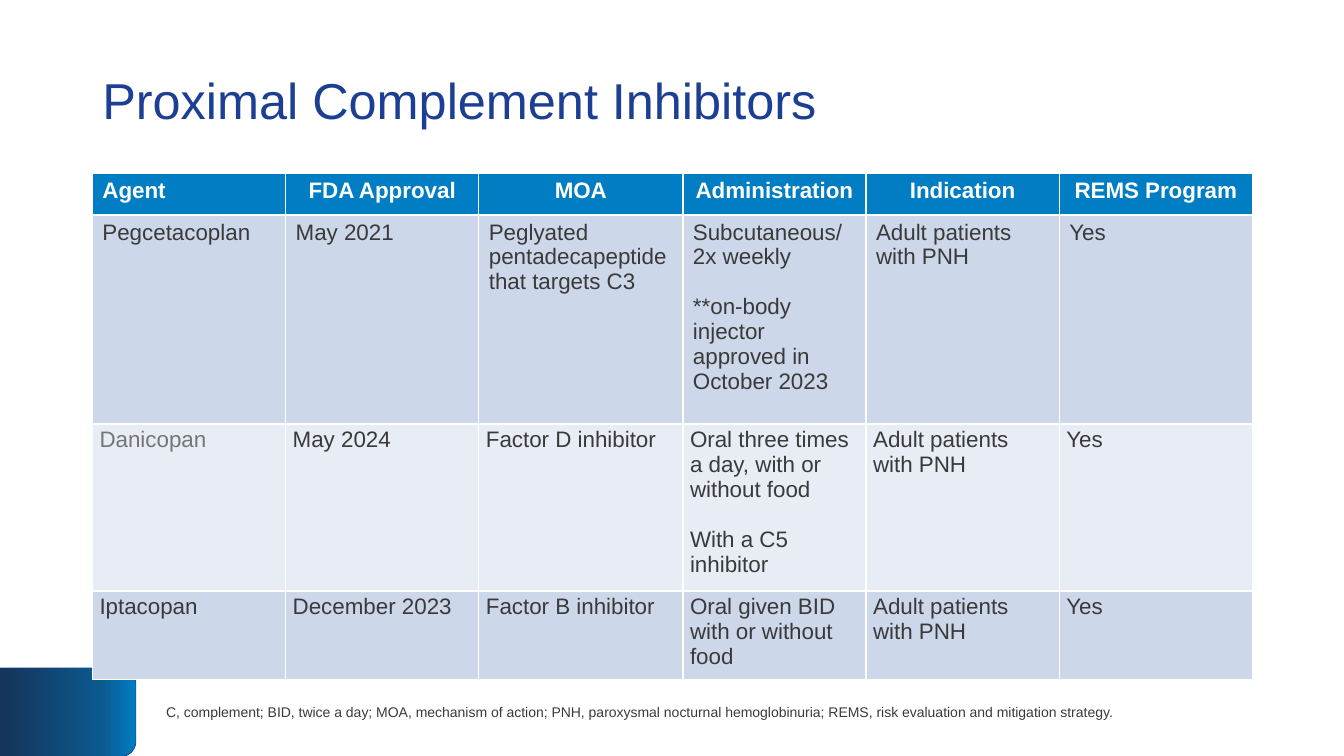
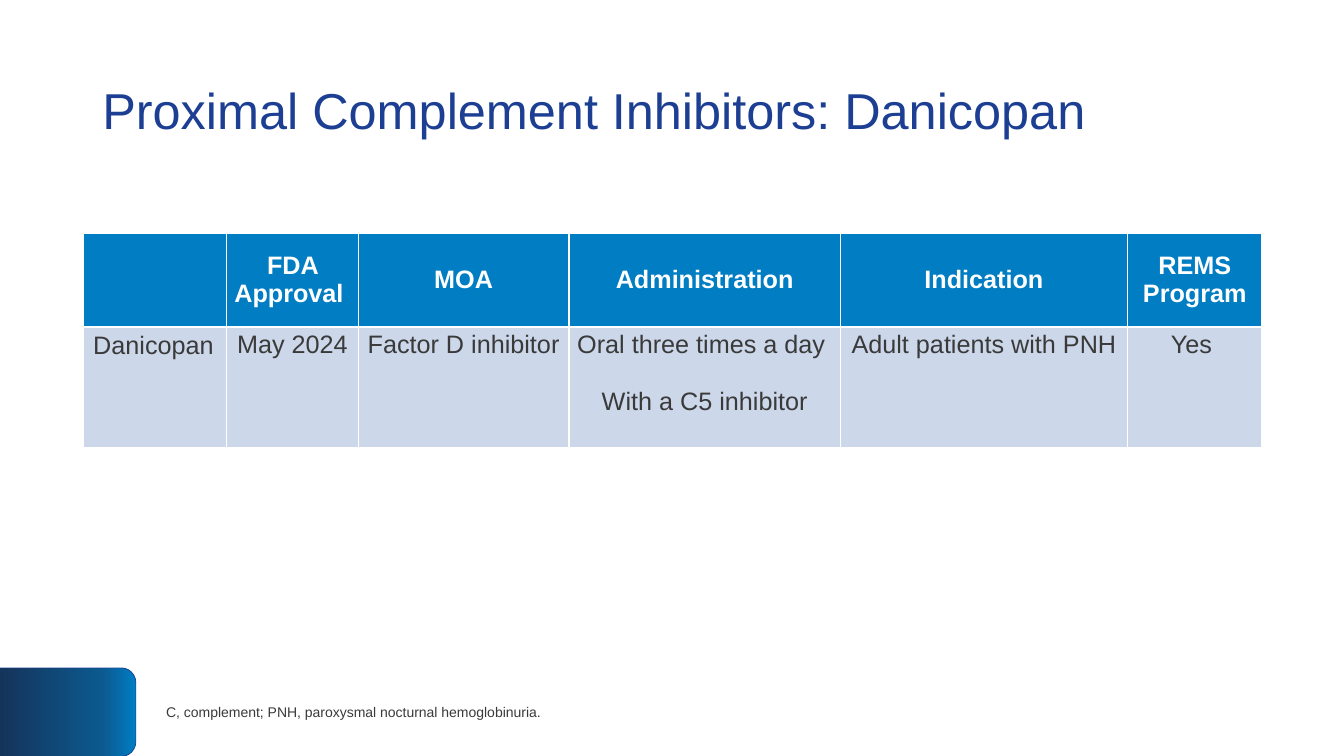
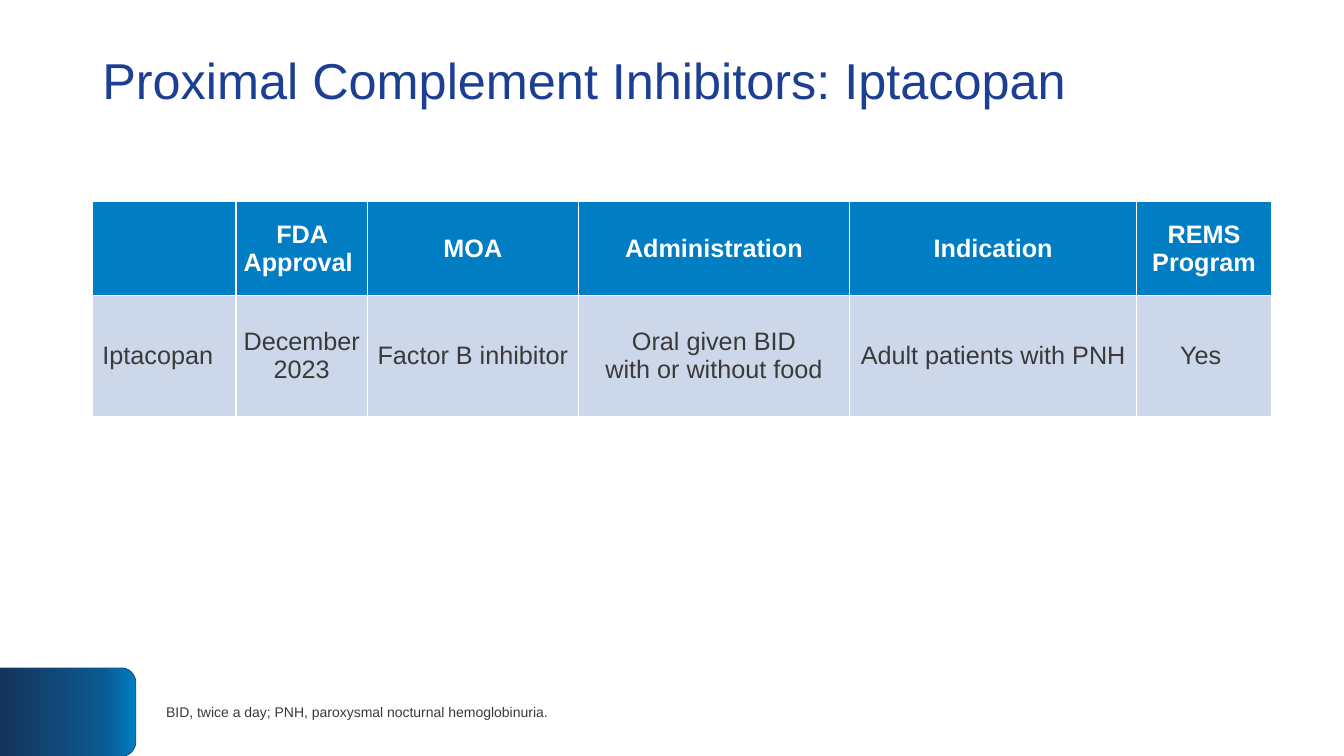
from dataclasses import dataclass

from lxml import etree
from pptx import Presentation
from pptx import util as u
from pptx.dml.color import RGBColor
from pptx.enum import shapes, text
from pptx.oxml import ns, parse_xml


@dataclass(frozen=True)
class Theme:
    font: str = "Arial"
    title: str = "1C3F93"
    body: str = "3A3A3A"
    muted: str = "757575"
    white: str = "FFFFFF"
    header: str = "007DC3"
    bands: tuple = ("CCD7E9", "E7ECF5")
    tab_stops: tuple = ((0, "007DC3"), (25, "0B598F"), (100, "15345A"))
    title_size: int = 36
    note_size: int = 10
    wide_inset: tuple = (1.2, 0.6)
    tight_inset: tuple = (0.85, 0.45)


T = Theme()
WIDTH, HEIGHT = u.Inches(13.33), u.Inches(7.5)
GRID_COLUMNS = 160
LEFT, CONTENT_WIDTH = 11, 138
CENTER, START = text.PP_ALIGN.CENTER, text.PP_ALIGN.LEFT
TOP, MIDDLE = text.MSO_ANCHOR.TOP, text.MSO_ANCHOR.MIDDLE

HEADINGS = ["FDA Approval ", "MOA", "Administration", "Indication", "REMS Program"]
OVERVIEW = [
    ["Agent"] + [h.strip() for h in HEADINGS],
    ["Pegcetacoplan", "May 2021", "Peglyated pentadecapeptide that targets C3",
     ["Subcutaneous/ 2x weekly", "**on-body injector approved in October 2023"],
     "Adult patients with PNH", "Yes"],
    ["Danicopan", "May 2024", "Factor D inhibitor",
     ["Oral three times a day, with or without food", "With a C5 inhibitor"],
     "Adult patients with PNH", "Yes"],
    ["Iptacopan", "December 2023", "Factor B inhibitor",
     "Oral given BID with or without food", "Adult patients with PNH", "Yes"],
]
DANICOPAN = ["Danicopan", "May 2024", "Factor D inhibitor",
             ["Oral three times a day ", "With a C5 inhibitor"],
             "Adult patients with PNH", "Yes "]
IPTACOPAN = ["Iptacopan", "December 2023", "Factor B inhibitor",
             "Oral given BID\nwith or without food",
             "Adult patients with PNH", "Yes "]


def grid(n):
    return u.Emu(round(n * WIDTH / GRID_COLUMNS))


def rgb(color):
    return RGBColor.from_string(color)


def write(p, content, size, color, bold=False):
    for i, line in enumerate(content.split("\n")):
        if i:
            p.add_line_break()
        if line:
            r = p.add_run()
            r.text = line
            r.font.name, r.font.size, r.font.bold = T.font, u.Pt(size), bold
            r.font.color.rgb = rgb(color)


def add_text(s, box, content, size, color, line_spacing=1.0):
    tf = s.shapes.add_textbox(*map(grid, box)).text_frame
    tf.word_wrap = True
    tf.vertical_anchor = MIDDLE
    p = tf.paragraphs[0]
    p.line_spacing = line_spacing
    write(p, content, size, color)


def add_corner_tab(s):
    sp = s.shapes.add_shape(shapes.MSO_SHAPE.ROUND_2_SAME_RECTANGLE,
                            *map(grid, (2.8, 76.7, 10.55, 16.2)))
    sp.rotation = 90
    sp.shadow.inherit = False
    sp.line.color.rgb = rgb(T.title)
    sp.line.width = u.Pt(0.5)
    sp.fill.background()
    stops = "".join(f'<a:gs pos="{pos * 1000}"><a:srgbClr val="{color}"/></a:gs>'
                    for pos, color in T.tab_stops)
    gradient = parse_xml(f'<a:gradFill {ns.nsdecls("a")} rotWithShape="1"><a:gsLst>{stops}'
                         '</a:gsLst><a:lin ang="5400000" scaled="0"/></a:gradFill>')
    properties = sp.element.spPr
    properties.replace(properties.find(ns.qn("a:noFill")), gradient)


def add_borders(cell):
    properties = cell._tc.get_or_add_tcPr()
    for i, side in enumerate("LRTB"):
        line = etree.Element(ns.qn(f"a:ln{side}"), w=str(u.Pt(1)))
        fill = etree.SubElement(line, ns.qn("a:solidFill"))
        etree.SubElement(fill, ns.qn("a:srgbClr"), val=T.white)
        properties.insert(i, line)


def fill_cell(cell, content, size, fill, color=T.body, bold=False,
              align=START, anchor=TOP, inset=T.tight_inset):
    cell.fill.solid()
    cell.fill.fore_color.rgb = rgb(fill)
    cell.vertical_anchor = anchor
    cell.margin_left = cell.margin_right = grid(inset[0])
    cell.margin_top = cell.margin_bottom = grid(inset[1])
    add_borders(cell)
    tf = cell.text_frame
    for i, paragraph in enumerate([content] if isinstance(content, str) else content):
        p = tf.add_paragraph() if i else tf.paragraphs[0]
        p.alignment = align
        if i:
            p.space_before = u.Pt(size * 1.12)
        write(p, paragraph, size, color, bold)


def add_table(s, left, top, columns, rows, data, size, style):
    box = left, top, sum(columns), sum(rows)
    table = s.shapes.add_table(len(rows), len(columns), *map(grid, box)).table
    table.horz_banding = False
    for column, width in zip(table.columns, columns):
        column.width = grid(width)
    for row, height in zip(table.rows, rows):
        row.height = grid(height)
    for i, values in enumerate(data):
        for j, value in enumerate(values):
            look = (dict(fill=T.header, color=T.white, bold=True) if i == 0
                    else dict(fill=T.bands[(i - 1) % 2]))
            fill_cell(table.cell(i, j), value, size, **{**look, **style(i, j)})


def overview_style(i, j):
    style = dict(inset=T.wide_inset if i < 2 else T.tight_inset,
                 align=CENTER if i == 0 and j else START)
    if (i, j) == (2, 0):
        style["color"] = T.muted
    return style


def add_agent_table(s, left, top, values, anchor):
    def style(i, j):
        return dict(align=CENTER if j else START,
                    anchor=anchor if i else MIDDLE,
                    inset=T.tight_inset if j else T.wide_inset)

    add_table(s, left, top, (17.1, 15.65, 25.1, 32.3, 34.2, 16), (11.2, 14.35),
              [[""] + HEADINGS, values], 18, style)


def add_slide(prs, title, title_height, note):
    s = prs.slides.add_slide(prs.slide_layouts[6])
    add_corner_tab(s)
    add_text(s, (LEFT, 4.8, CONTENT_WIDTH, title_height), title,
             T.title_size, T.title, 0.9)
    add_text(s, (18.6, 79.5, 139.8, 10.5), note, T.note_size, T.body)
    return s


def main():
    prs = Presentation()
    prs.slide_width, prs.slide_height = WIDTH, HEIGHT

    s = add_slide(prs, "Proximal Complement Inhibitors", 15,
                  "C, complement; BID, twice a day; MOA, mechanism of action; "
                  "PNH, paroxysmal nocturnal hemoglobinuria; "
                  "REMS, risk evaluation and mitigation strategy.")
    add_table(s, LEFT, 20.7, (23, 23, 24.3, 21.8, 23, 23), (4.9, 24.9, 18.7, 9.7),
              OVERVIEW, 16, overview_style)

    s = add_slide(prs, "Proximal Complement Inhibitors: Danicopan", 17.4,
                  "C, complement; PNH, paroxysmal nocturnal hemoglobinuria.")
    add_agent_table(s, 9.9, 27.75, DANICOPAN, TOP)

    s = add_slide(prs, "Proximal Complement Inhibitors: Iptacopan", 10.2,
                  "BID, twice a day; PNH, paroxysmal nocturnal hemoglobinuria.")
    add_agent_table(s, LEFT, 24, IPTACOPAN, MIDDLE)

    prs.save("out.pptx")


if __name__ == "__main__":
    main()
